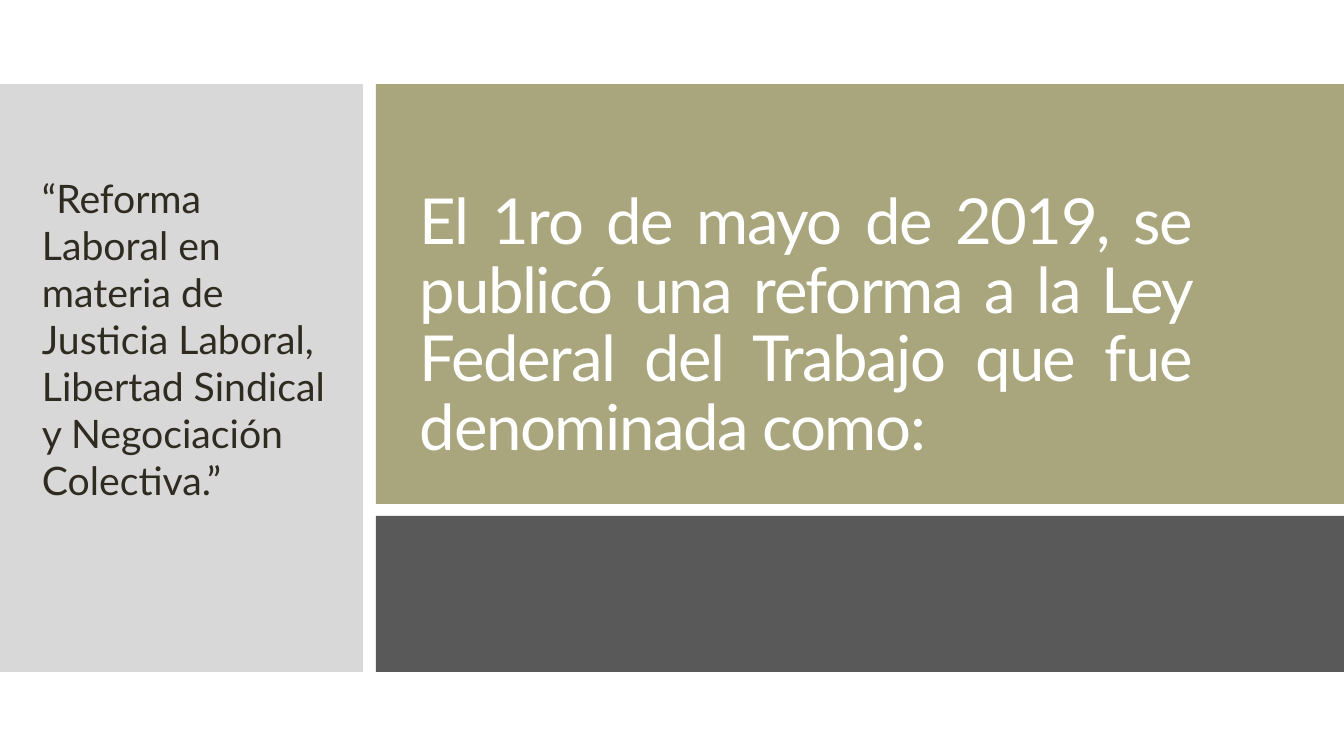
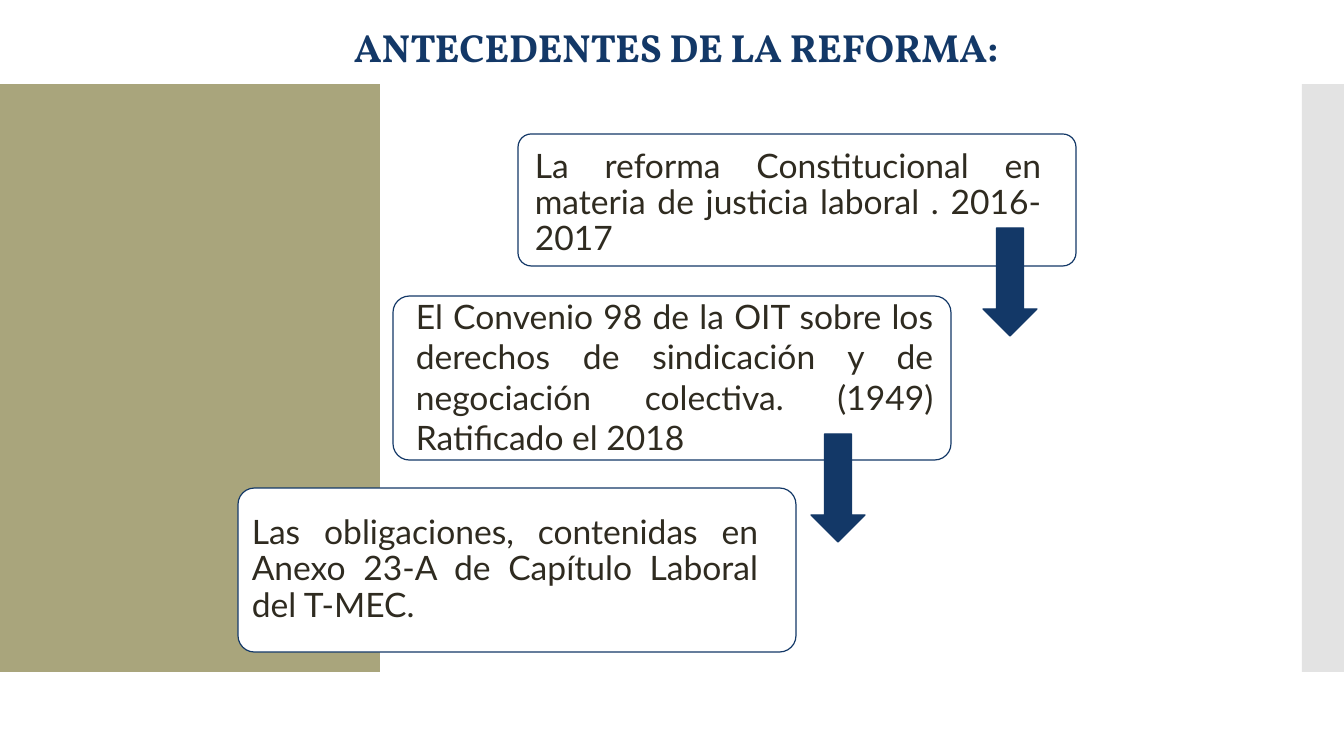
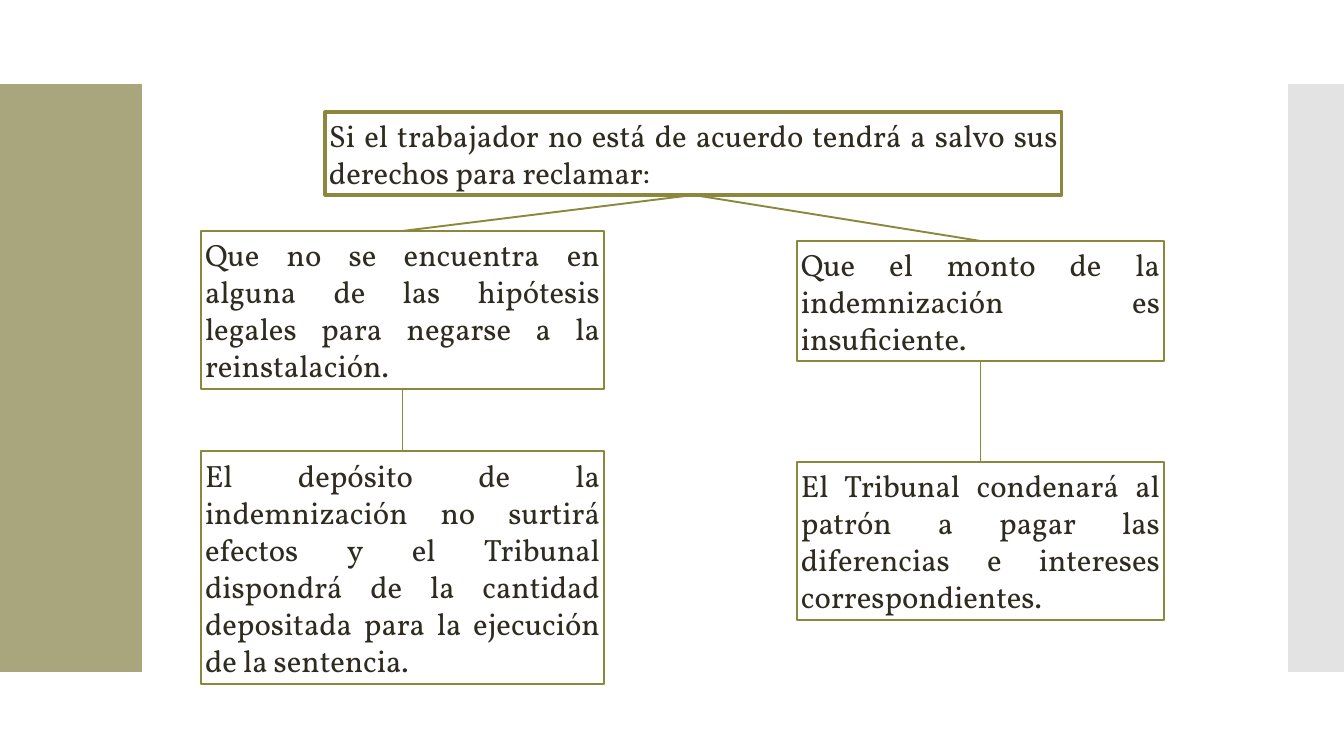
from pptx import Presentation
from pptx.dml.color import RGBColor
from pptx.enum.shapes import MSO_CONNECTOR, MSO_SHAPE as SHAPE
from pptx.enum.text import MSO_ANCHOR as ANCHOR, MSO_AUTO_SIZE, PP_ALIGN as ALIGN
from pptx.oxml.ns import qn
from pptx.util import Pt
from lxml import etree

WIDTH, HEIGHT = 1344, 756
BAND_TOP, BAND_H = 84, 588
EMU_PER_PX = 12192000 / WIDTH

WHITE = RGBColor(0xFF, 0xFF, 0xFF)
OLIVE = RGBColor(0xA9, 0xA5, 0x7C)
DARK_OLIVE = RGBColor(0x8D, 0x87, 0x3E)
NAVY = RGBColor(0x13, 0x38, 0x67)
INK = RGBColor(0x2F, 0x2B, 0x20)
CHARCOAL = RGBColor(0x59, 0x59, 0x59)
GREY = RGBColor(0xD8, 0xD8, 0xD8)
LIGHT_GREY = RGBColor(0xE3, 0xE3, 0xE3)

SANS, SERIF = "Lato", "Vollkorn"
TITLE_ONLY, BLANK = 5, 6
TOP, BOTTOM = 0, 2


def px(n):
    return round(n * EMU_PER_PX)


def add_box(slide, box, fill, line=None, weight=0.85, kind=SHAPE.RECTANGLE):
    sp = slide.shapes.add_shape(kind, *map(px, box))
    sp.shadow.inherit = False
    sp.fill.solid()
    sp.fill.fore_color.rgb = fill
    if line is None:
        sp.line.fill.background()
    else:
        sp.line.color.rgb = line
        sp.line.width = Pt(weight)
    return sp


def write(sp, text, font, size, color=INK, align=ALIGN.JUSTIFY, anchor=ANCHOR.MIDDLE,
          margins=(10, 5, 10, 5), leading=1.0, bold=False, tracking=0):
    """Fill a shape with one paragraph; margins are left, top, right, bottom."""
    tf = sp.text_frame
    tf.word_wrap = True
    tf.auto_size = MSO_AUTO_SIZE.NONE
    tf.vertical_anchor = anchor
    tf.margin_left, tf.margin_top, tf.margin_right, tf.margin_bottom = map(px, margins)
    p = tf.paragraphs[0]
    p.alignment = align
    p.line_spacing = leading
    r = p.add_run()
    r.text = text
    r.font.name = font
    r.font.size = Pt(size)
    r.font.bold = bold
    r.font.color.rgb = color
    if tracking:
        r.font._element.set("spc", str(tracking * 100))


def set_title(slide, box, text, font, size, color, **style):
    """Place the title placeholder in front of the panels."""
    sp = slide.shapes.title
    sp.left, sp.top, sp.width, sp.height = map(px, box)
    write(sp, text, font, size, color, **style)
    sp.element.getparent().append(sp.element)


def add_bands(slide, left_w, right_w):
    add_box(slide, (0, BAND_TOP, left_w, BAND_H), OLIVE)
    add_box(slide, (WIDTH - right_w, BAND_TOP, right_w, BAND_H), LIGHT_GREY)


def add_step(slide, box, text, margins, leading):
    sp = add_box(slide, box, WHITE, NAVY, kind=SHAPE.ROUNDED_RECTANGLE)
    sp.adjustments[0] = 0.1
    write(sp, text, SANS, 24, margins=margins, leading=leading)


def add_node(slide, box, text, weight=0.85):
    sp = add_box(slide, box, WHITE, DARK_OLIVE, weight)
    write(sp, text, SERIF, 22, margins=(4, 4, 4, 4))
    return sp


def link(slide, upper, lower):
    line = slide.shapes.add_connector(MSO_CONNECTOR.STRAIGHT, 0, 0, 0, 0)
    line.begin_connect(upper, BOTTOM)
    line.end_connect(lower, TOP)
    line.line.color.rgb = DARK_OLIVE
    line.line.width = Pt(1.35)
    etree.SubElement(line._element.spPr, qn("a:effectLst"))


def new_slide(prs, layout):
    return prs.slides.add_slide(prs.slide_layouts[layout])


def build_opening(prs):
    s = new_slide(prs, TITLE_ONLY)
    quote = add_box(s, (0, BAND_TOP, 363, BAND_H), GREY)
    write(quote, "“Reforma Laboral en materia de Justicia Laboral, Libertad Sindical "
          "y Negociación Colectiva.”", SANS, 28, align=ALIGN.LEFT, anchor=ANCHOR.TOP,
          margins=(42, 90, 32, 0))
    left, right_w = 376, WIDTH - 376
    add_box(s, (left, BAND_TOP, right_w, 420), OLIVE)
    add_box(s, (left, 516, right_w, 156), CHARCOAL)
    set_title(s, (left + 34, BAND_TOP + 59, 792, 326),
              "El 1ro de mayo de 2019, se publicó una reforma a la Ley Federal del Trabajo "
              "que fue denominada como:", SANS, 45.3, WHITE,
              anchor=ANCHOR.BOTTOM, leading=0.9, tracking=-1)


def build_background(prs):
    s = new_slide(prs, TITLE_ONLY)
    add_bands(s, 380, 42)
    set_title(s, (344, 18, 746, 57), "ANTECEDENTES DE LA REFORMA:", SERIF, 28, NAVY,
              align=ALIGN.LEFT, anchor=ANCHOR.TOP, bold=True)
    step_w = 558
    steps = [
        (518, 134, 132, "La reforma Constitucional en materia de justicia laboral . 2016-2017",
         (13, 7, 31, 0), 0.9),
        (393, 296, 164, "El Convenio 98 de la OIT sobre los derechos de sindicación y de "
         "negociación colectiva. (1949) Ratificado el 2018", (18, 0, 13, 3), 1.0),
        (238, 488, 164, "Las obligaciones, contenidas en Anexo 23-A de Capítulo Laboral "
         "del T-MEC.", (9, 0, 33, 0), 0.9),
    ]
    for left, top, height, text, margins, leading in steps:
        add_step(s, (left, top, step_w, height), text, margins, leading)
    for left, top in ((983, 228), (811, 434)):
        add_box(s, (left, top, 54, 108), NAVY, NAVY, kind=SHAPE.DOWN_ARROW)


def build_claims(prs):
    s = new_slide(prs, BLANK)
    add_bands(s, 142, 56)
    root = add_node(s, (325, 112, 737, 83), "Si el trabajador no está de acuerdo tendrá a "
                    "salvo sus derechos para reclamar:", weight=2.25)
    branches = [
        (201, 403, (231, 158, "Que no se encuentra en alguna de las hipótesis legales para "
                    "negarse a la reinstalación."),
         (451, 233, "El depósito de la indemnización no surtirá efectos y el Tribunal "
          "dispondrá de la cantidad depositada para la ejecución de la sentencia.")),
        (797, 367, (241, 120, "Que el monto de la indemnización es insuficiente."),
         (462, 158, "El Tribunal condenará al patrón a pagar las diferencias e intereses "
          "correspondientes.")),
    ]
    for left, width, *nodes in branches:
        upper = root
        for top, height, text in nodes:
            node = add_node(s, (left, top, width, height), text)
            link(s, upper, node)
            upper = node


def main():
    prs = Presentation()
    prs.slide_width, prs.slide_height = px(WIDTH), px(HEIGHT)
    build_opening(prs)
    build_background(prs)
    build_claims(prs)
    prs.save("out.pptx")


if __name__ == "__main__":
    main()
